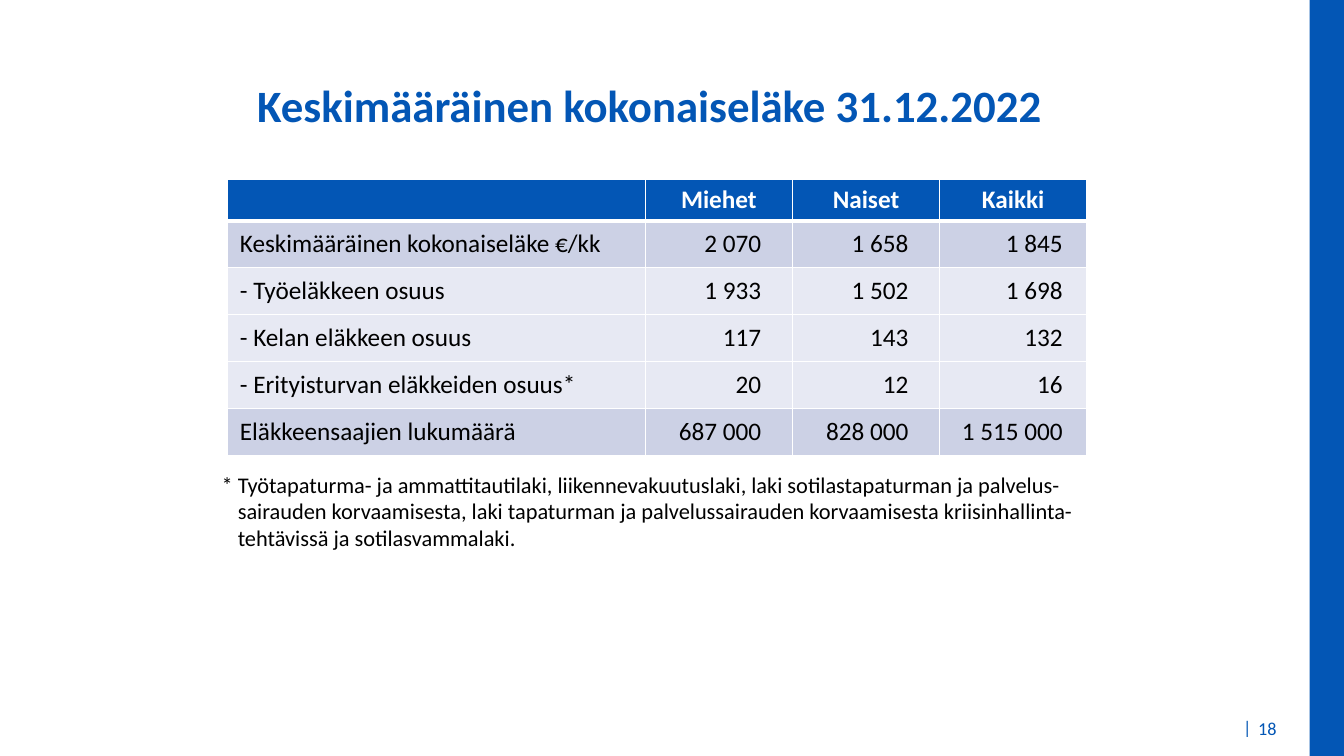
from dataclasses import dataclass

from lxml.etree import SubElement
from pptx import Presentation
from pptx.dml.color import RGBColor
from pptx.enum.shapes import MSO_SHAPE
from pptx.enum.text import MSO_ANCHOR, PP_ALIGN
from pptx.oxml.ns import qn
from pptx.util import Inches, Pt


@dataclass(frozen=True)
class Theme:
    font: str = "Calibri"
    blue: RGBColor = RGBColor(0x03, 0x56, 0xB5)
    black: RGBColor = RGBColor(0, 0, 0)
    white: RGBColor = RGBColor(0xFF, 0xFF, 0xFF)
    strong_row: RGBColor = RGBColor(0xCC, 0xD1, 0xE5)
    light_row: RGBColor = RGBColor(0xE7, 0xE9, 0xF3)
    title: Pt = Pt(32)
    table: Pt = Pt(18)
    note: Pt = Pt(16)
    page: Pt = Pt(13)


THEME = Theme()

HEADINGS = ("", "Miehet", "Naiset", "Kaikki")
PENSIONS = (
    ("Keskimääräinen kokonaiseläke €/kk", "2 070", "1 658", "1 845"),
    ("- Työeläkkeen osuus", "1 933", "1 502", "1 698"),
    ("- Kelan eläkkeen osuus", "117", "143", "132"),
    ("- Erityisturvan eläkkeiden osuus*", "20", "12", "16"),
    ("Eläkkeensaajien lukumäärä", "687 000", "828 000", "1 515 000"),
)
FOOTNOTE = (
    "*\tTyötapaturma- ja ammattitautilaki, liikennevakuutuslaki, "
    "laki sotilastapaturman ja palvelus-sairauden korvaamisesta, "
    "laki tapaturman ja palvelussairauden korvaamisesta "
    "kriisinhallinta-tehtävissä ja sotilasvammalaki."
)


def style_paragraph(p, size, color, bold=False, align=PP_ALIGN.LEFT):
    p.alignment = align
    p.font.name = THEME.font
    p.font.size = size
    p.font.bold = bold
    p.font.color.rgb = color


def set_title(s, text):
    title = s.shapes.title
    title.left, title.top = Inches(0), Inches(0.72)
    title.width, title.height = Inches(12.89), Inches(0.92)
    tf = title.text_frame
    tf.text = text
    tf.vertical_anchor = MSO_ANCHOR.TOP
    style_paragraph(tf.paragraphs[0], THEME.title, THEME.blue, True, PP_ALIGN.CENTER)


def add_side_band(s):
    band = s.shapes.add_shape(
        MSO_SHAPE.RECTANGLE, Inches(12.99), Inches(0), Inches(0.35), Inches(7.5))
    band.shadow.inherit = False
    band.fill.solid()
    band.fill.fore_color.rgb = THEME.blue
    band.line.fill.background()


def add_text(s, text, left, top, width, height, size, color, wrap=True):
    box = s.shapes.add_textbox(Inches(left), Inches(top), Inches(width), Inches(height))
    tf = box.text_frame
    tf.word_wrap = wrap
    p = tf.paragraphs[0]
    p.text = text
    style_paragraph(p, size, color)
    return tf


def set_hanging_indent(p, indent):
    pPr = p._p.get_or_add_pPr()
    pPr.set("marL", str(indent))
    pPr.set("indent", str(-indent))


def set_borders(cell, bottom):
    """Draw white cell borders, 1 pt wide except for the bottom one."""
    tcPr = cell._tc.get_or_add_tcPr()
    for side, width in (("L", 1), ("R", 1), ("T", 1), ("B", bottom)):
        ln = SubElement(tcPr, qn(f"a:ln{side}"), w=str(Pt(width)))
        SubElement(SubElement(ln, qn("a:solidFill")), qn("a:srgbClr"),
                   val=str(THEME.white))


def fill_cell(cell, text, fill, color, bold, align, bottom=1):
    set_borders(cell, bottom)
    cell.fill.solid()
    cell.fill.fore_color.rgb = fill
    p = cell.text_frame.paragraphs[0]
    p.text = text
    style_paragraph(p, THEME.table, color, bold, align)


def set_margins(cell, left, right):
    cell.margin_left, cell.margin_right = Inches(left), Inches(right)
    cell.margin_top = cell.margin_bottom = Inches(0.08)


def add_pension_table(s):
    table = s.shapes.add_table(
        len(PENSIONS) + 1, len(HEADINGS),
        Inches(2.26), Inches(1.78), Inches(8.53), Inches(2.69)).table
    for column, width in zip(table.columns, (4.14, 1.46, 1.46, 1.46)):
        column.width = Inches(width)
    for row in table.rows:
        row.height = Inches(0.41)

    for c, heading in enumerate(HEADINGS):
        fill_cell(table.cell(0, c), heading, THEME.blue, THEME.white,
                  True, PP_ALIGN.CENTER, bottom=3)

    margins = ((0.12, 0.1), (0.04, 0.31), (0.04, 0.31), (0.08, 0.24))
    for r, values in enumerate(PENSIONS, start=1):
        fill = THEME.light_row if values[0].startswith("-") else THEME.strong_row
        for c, value in enumerate(values):
            cell = table.cell(r, c)
            align = PP_ALIGN.RIGHT if c else PP_ALIGN.LEFT
            fill_cell(cell, value, fill, THEME.black, False, align)
            set_margins(cell, *margins[c])


def main():
    prs = Presentation()
    prs.slide_width, prs.slide_height = Inches(13.33), Inches(7.5)
    s = prs.slides.add_slide(prs.slide_layouts[5])

    add_side_band(s)
    set_title(s, "Keskimääräinen kokonaiseläke 31.12.2022")
    add_pension_table(s)
    note = add_text(s, FOOTNOTE, 2.1, 4.62, 8.69, 0.91, THEME.note, THEME.black)
    set_hanging_indent(note.paragraphs[0], Inches(0.16))
    add_text(s, "|", 12.23, 7.06, 0.29, 0.35, THEME.page, THEME.blue, wrap=False)
    page = add_text(s, "18", 12.38, 7.05, 0.44, 0.35, THEME.page, THEME.blue)
    page.vertical_anchor = MSO_ANCHOR.MIDDLE

    prs.save("out.pptx")


if __name__ == "__main__":
    main()
